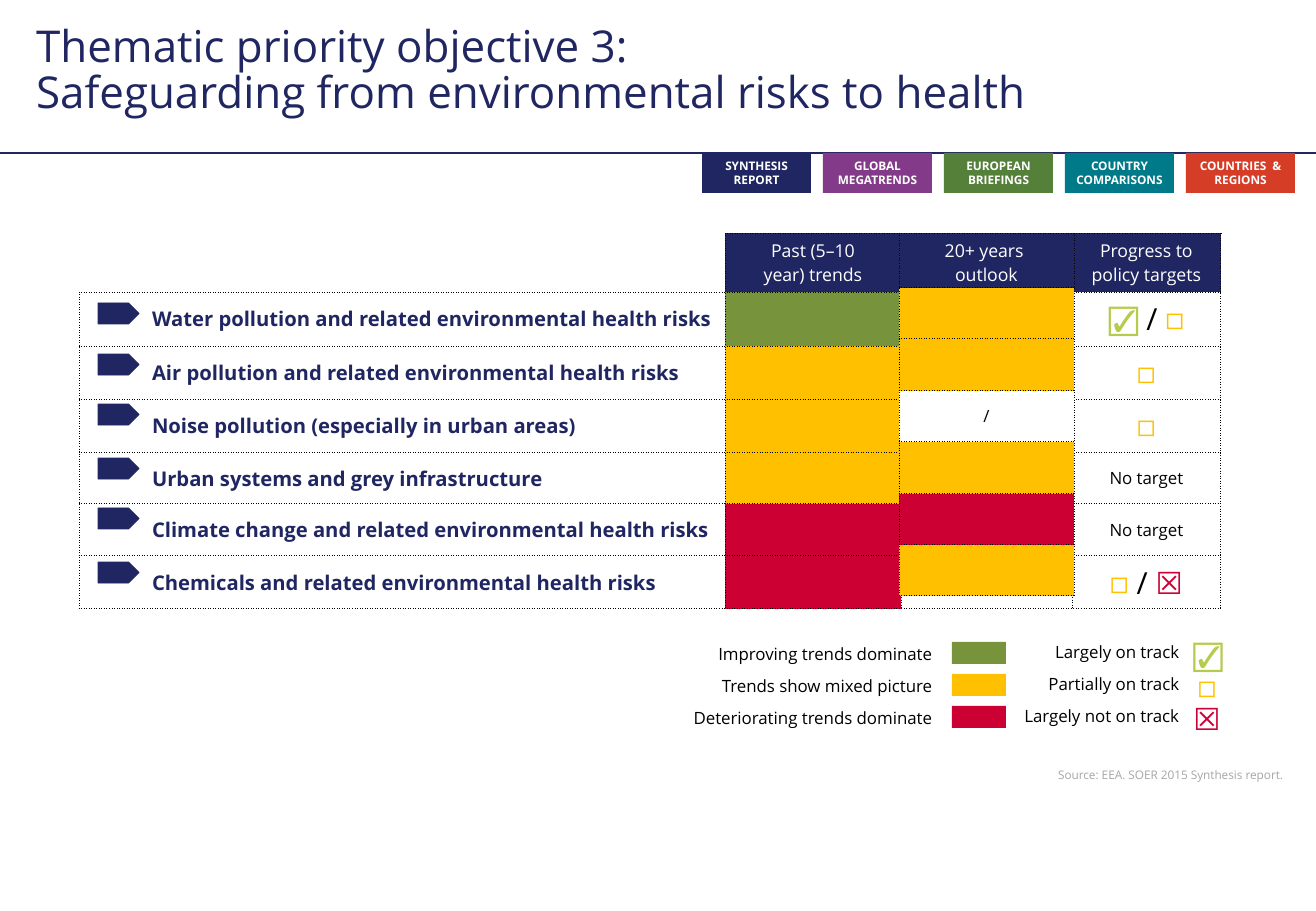
from dataclasses import dataclass

from lxml.etree import SubElement
from pptx import Presentation
from pptx.dml.color import RGBColor
from pptx.enum.shapes import MSO_CONNECTOR, MSO_SHAPE
from pptx.enum.text import MSO_ANCHOR, MSO_AUTO_SIZE, PP_ALIGN
from pptx.oxml.ns import qn
from pptx.util import Emu, Pt


@dataclass(frozen=True)
class Theme:
    font: str = "Open Sans"
    symbol_font: str = "Times New Roman"
    navy: str = "202661"
    purple: str = "833A88"
    leaf: str = "54803A"
    teal: str = "007A88"
    orange: str = "D63D27"
    improving: str = "77933C"
    mixed: str = "FFC000"
    worse: str = "CC0033"
    lime: str = "B4CB4C"
    grey: str = "A6A6A6"
    black: str = "000000"
    white: str = "FFFFFF"
    title: float = 26
    symbol: float = 18
    label: float = 12
    header: float = 10.5
    body: float = 10
    small: float = 7


THEME = Theme()
EMU_PER_PX = 7526

ON_TRACK = ("☑", THEME.lime, THEME.symbol_font)
PARTIAL = ("◻", THEME.mixed, THEME.font)
OFF_TRACK = ("☒", THEME.worse, THEME.font)

TABS = [
    ("SYNTHESIS\nREPORT", THEME.navy),
    ("GLOBAL\nMEGATRENDS", THEME.purple),
    ("EUROPEAN\nBRIEFINGS", THEME.leaf),
    ("COUNTRY COMPARISONS", THEME.teal),
    ("COUNTRIES  & REGIONS", THEME.orange),
]
TOPICS = [
    ("Water pollution and related environmental health risks", THEME.improving, [ON_TRACK, PARTIAL]),
    ("Air pollution and related environmental health risks", THEME.mixed, [PARTIAL]),
    ("Noise pollution (especially in urban areas)", THEME.mixed, [PARTIAL]),
    ("Urban systems and grey infrastructure", THEME.mixed, []),
    ("Climate change and related environmental health risks", THEME.worse, []),
    ("Chemicals and related environmental health risks", THEME.worse, [PARTIAL, OFF_TRACK]),
]
OUTLOOK = [THEME.mixed, THEME.mixed, THEME.white, THEME.mixed, THEME.worse, THEME.mixed]
ARROW_OFFSETS = [70, 121, 171, 225, 275, 329]
LEGEND = [
    ("Improving trends dominate", THEME.improving, "Largely on track", ON_TRACK),
    ("Trends show mixed picture", THEME.mixed, "Partially on track", PARTIAL),
    ("Deteriorating trends dominate", THEME.worse, "Largely not on track", OFF_TRACK),
]


def px(count):
    return Emu(count * EMU_PER_PX)


def format_font(font, size, color, name=THEME.font, bold=False):
    font.size = Pt(size)
    font.name = name
    font.bold = bold
    font.color.rgb = RGBColor.from_string(color)


def write(frame, text, size, color, align=PP_ALIGN.CENTER, name=THEME.font, bold=False):
    frame.text = text
    for para in frame.paragraphs:
        para.alignment = align
        for span in para.runs:
            format_font(span.font, size, color, name, bold)


def add_block(page, kind, box, color, outlined=False):
    block = page.shapes.add_shape(kind, *map(px, box))
    block.shadow.inherit = False
    block.fill.solid()
    block.fill.fore_color.rgb = RGBColor.from_string(color)
    if outlined:
        block.line.color.rgb = RGBColor.from_string(color)
        block.line.width = Pt(0.5)
    else:
        block.line.fill.background()
    return block


def add_label(page, box, text, size, color, align, name=THEME.font, wrap=True):
    label = page.shapes.add_textbox(*map(px, box))
    label.text_frame.word_wrap = wrap
    write(label.text_frame, text, size, color, align, name)
    return label


def add_title(page, box):
    title = page.shapes.title
    title.left, title.top, title.width, title.height = map(px, box)
    frame = title.text_frame
    frame.word_wrap = True
    frame.auto_size = MSO_AUTO_SIZE.NONE
    frame.vertical_anchor = MSO_ANCHOR.TOP
    write(frame, "Thematic priority objective 3:\vSafeguarding from environmental risks to health",
          THEME.title, THEME.navy, PP_ALIGN.LEFT)
    frame.paragraphs[0].line_spacing = 0.87


def add_tabs(page, box):
    left, top, width, height = box
    rule = page.shapes.add_connector(MSO_CONNECTOR.STRAIGHT, 0, px(top), px(1316), px(top))
    rule.line.color.rgb = RGBColor.from_string(THEME.navy)
    rule.line.width = Pt(0.75)
    SubElement(rule.element.spPr, qn("a:effectLst"))
    tab_width = 109
    step = (width - tab_width) / (len(TABS) - 1)
    for index, (text, color) in enumerate(TABS):
        tab = add_block(page, MSO_SHAPE.RECTANGLE,
                        (left + round(index * step), top, tab_width, height), color)
        frame = tab.text_frame
        frame.word_wrap = True
        frame.vertical_anchor = MSO_ANCHOR.MIDDLE
        frame.margin_left = frame.margin_right = px(5)
        frame.margin_top = frame.margin_bottom = px(5)
        write(frame, text, THEME.small, THEME.white, bold=True)


def set_borders(cell, hidden=()):
    properties = cell._tc.get_or_add_tcPr()
    for side in ("lnL", "lnR", "lnT", "lnB"):
        line = SubElement(properties, qn(f"a:{side}"), w=str(Pt(0.5)))
        if side in hidden:
            SubElement(line, qn("a:noFill"))
            continue
        fill = SubElement(line, qn("a:solidFill"))
        SubElement(fill, qn("a:srgbClr"), val=THEME.black)
        SubElement(line, qn("a:prstDash"), val="sysDot")


def paint(cell, color, hidden=()):
    set_borders(cell, hidden)
    cell.fill.solid()
    cell.fill.fore_color.rgb = RGBColor.from_string(color)
    cell.vertical_anchor = MSO_ANCHOR.MIDDLE


def add_grid(page, left, top, columns, rows):
    grid = page.shapes.add_table(len(rows), len(columns), px(left), px(top),
                                 px(sum(columns)), px(sum(rows))).table
    grid.first_row = False
    grid.horz_banding = False
    for column, width in zip(grid.columns, columns):
        column.width = px(width)
    for row, height in zip(grid.rows, rows):
        row.height = px(height)
    return grid


def write_marks(cell, marks):
    para = cell.text_frame.paragraphs[0]
    para.alignment = PP_ALIGN.CENTER
    spans = list(marks)
    if len(marks) == 2:
        first, second = marks
        spans = [(first[0] + " ", *first[1:]), ("/ ", THEME.black, THEME.font), second]
    for text, color, name in spans:
        span = para.add_run()
        span.text = text
        format_font(span.font, THEME.symbol, color, name)


def add_trends(page, left, top):
    grid = add_grid(page, left, top, [646, 176, 171, 149], [59, 54, 53, 54, 51, 52, 53])
    headers = ["", "Past (5–10\vyear) trends", "", "Progress to policy targets"]
    for column, text in enumerate(headers):
        cell = grid.cell(0, column)
        paint(cell, THEME.navy if text else THEME.white, () if column else ("lnL", "lnT"))
        if text:
            write(cell.text_frame, text, THEME.header, THEME.white)
    for row, (topic, trend, marks) in enumerate(TOPICS, 1):
        for column, color in enumerate([THEME.white, trend, THEME.white, THEME.white]):
            paint(grid.cell(row, column), color)
        label, target = grid.cell(row, 0), grid.cell(row, 3)
        label.margin_left = px(73)
        label.margin_right = 0
        write(label.text_frame, topic, THEME.label, THEME.navy, PP_ALIGN.LEFT, bold=True)
        if marks:
            write_marks(target, marks)
        else:
            write(target.text_frame, "No target", THEME.body, THEME.black)
    for offset in ARROW_OFFSETS:
        add_block(page, MSO_SHAPE.PENTAGON, (left + 19, top + offset, 41, 21), THEME.navy, True)


def add_outlook(page, left, top):
    grid = add_grid(page, left, top, [175], [54, 51, 52, 51, 52, 51, 51])
    paint(grid.cell(0, 0), THEME.navy)
    write(grid.cell(0, 0).text_frame, "20+ years  outlook", THEME.header, THEME.white)
    for row, color in enumerate(OUTLOOK, 1):
        cell = grid.cell(row, 0)
        paint(cell, color)
        if color == THEME.white:
            write(cell.text_frame, "/", THEME.body, THEME.black)


def add_legend(page, left, top):
    for index, (trend, color, progress, (mark, tint, name)) in enumerate(LEGEND):
        y = top + 32 * index
        add_block(page, MSO_SHAPE.RECTANGLE, (left + 312, y, 54, 22), color)
        add_label(page, (left, y - 4, 304, 33), trend, THEME.body, THEME.black, PP_ALIGN.RIGHT)
        add_label(page, (left + 251, y - 6, 300, 33), progress, THEME.body, THEME.black,
                  PP_ALIGN.RIGHT)
        add_label(page, (left + 541, y - 12, 52, 49), mark, THEME.symbol, tint,
                  PP_ALIGN.CENTER, name, False)


def add_source(page, box):
    source = add_label(page, box, "Source: EEA. SOER 2015 Synthesis report.", THEME.small,
                       THEME.grey, PP_ALIGN.RIGHT)
    source.text_frame.vertical_anchor = MSO_ANCHOR.BOTTOM


def main():
    deck = Presentation()
    deck.slide_width, deck.slide_height = px(1316), px(911)
    page = deck.slides.add_slide(deck.slide_layouts[5])
    add_tabs(page, (702, 153, 593, 40))
    add_title(page, (24, 20, 1266, 120))
    add_source(page, (23, 724, 1272, 64))
    add_trends(page, 79, 233)
    add_legend(page, 640, 642)
    add_outlook(page, 899, 233)
    deck.save("out.pptx")


if __name__ == "__main__":
    main()
